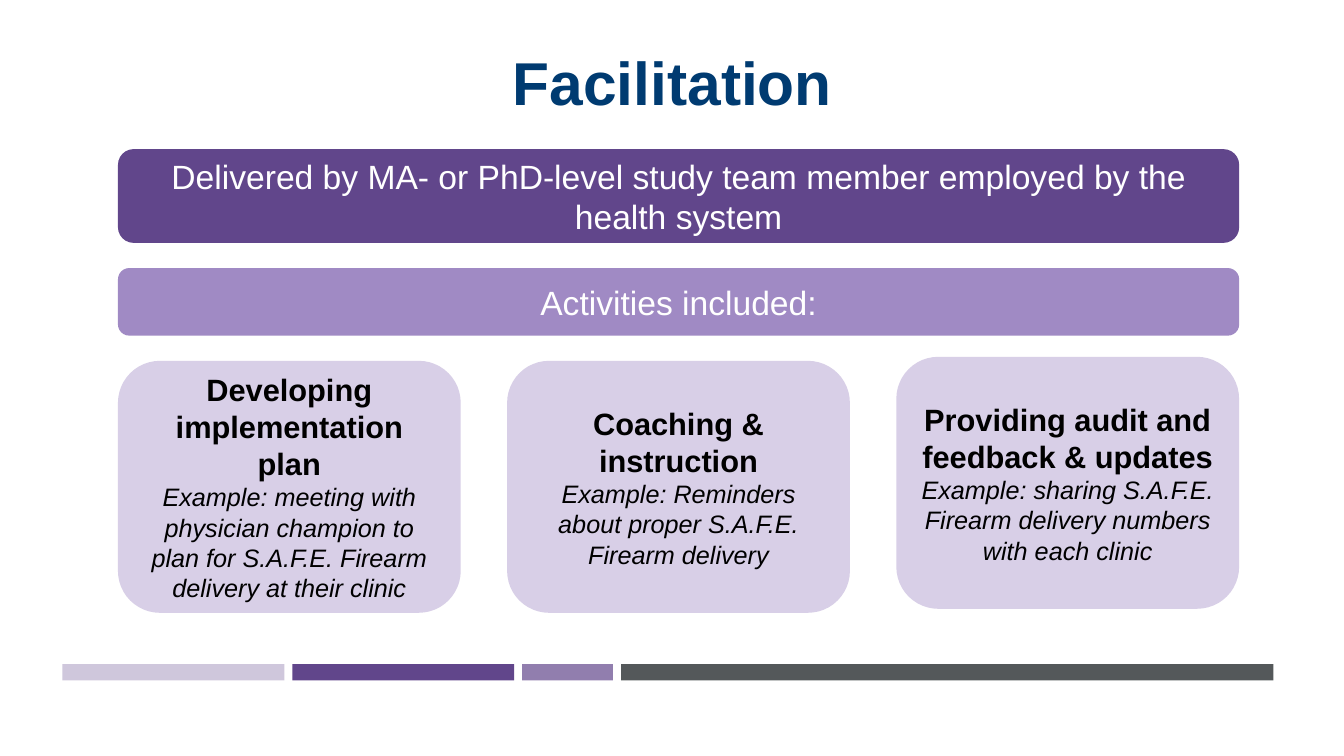
from pptx import Presentation
from pptx.dml.color import RGBColor as Rgb
from pptx.enum.shapes import MSO_SHAPE as Kind
from pptx.enum.text import MSO_ANCHOR as Anchor, PP_ALIGN as Align
from pptx.util import Inches, Pt

HUE = {
    "navy": "003B71", "white": "FFFFFF", "black": "000000", "slate": "54585A",
    "plum": "61468B", "mauve": "917EAE", "mist": "CFC7DC",
    "lilac": "A08AC4", "pale": "D8CFE7",
}
COLS, ROWS = 13.33, 7.5
LEFT, WIDE = 1.17, 11.12
CARD, STEP = 3.4, 3.86
GAP = 0.08
CARDS = [
    ("Developing implementation plan",
     "Example: meeting with physician champion to plan for S.A.F.E. Firearm delivery at their clinic", 3.58),
    ("Coaching & instruction",
     "Example: Reminders about proper S.A.F.E. Firearm delivery", 3.58),
    ("Providing audit and feedback & updates",
     "Example: sharing S.A.F.E. Firearm delivery numbers with each clinic", 3.54),
]
STRIP = [("mist", 2.2), ("plum", 2.2), ("mauve", 0.9), ("slate", 6.47)]


def cell(*spans):
    """Turn columns and rows of a one-inch grid into lengths."""
    return [Inches(span) for span in spans]


def write(frame, text, first=True, size=24, hue="white", bold=False, slant=False):
    """Add one centred paragraph to a text frame."""
    frame.word_wrap = True
    frame.vertical_anchor = Anchor.MIDDLE
    para = frame.paragraphs[0] if first else frame.add_paragraph()
    para.alignment = Align.CENTER
    run = para.add_run()
    run.text = text
    font = run.font
    font.name, font.size = "Arial", Pt(size)
    font.bold, font.italic = bold, slant
    font.color.rgb = Rgb.from_string(HUE[hue])


def block(slide, kind, hue, *spans):
    """Draw a flat filled shape and return its text frame."""
    shape = slide.shapes.add_shape(kind, *cell(*spans))
    shape.shadow.inherit = False
    shape.fill.solid()
    shape.fill.fore_color.rgb = Rgb.from_string(HUE[hue])
    shape.line.fill.background()
    return shape.text_frame


def title(slide, text):
    """Place the slide heading."""
    box = slide.shapes.add_textbox(*cell(0.92, 0.4, 11.5, 0.82))
    write(box.text_frame, text, size=43.2, hue="navy", bold=True)


def band(slide, text, hue, top, high):
    """Draw a full-width rounded band."""
    write(block(slide, Kind.ROUNDED_RECTANGLE, hue, LEFT, top, WIDE, high), text)


def card(slide, col, head, note, top):
    """Draw an activity card in the given column."""
    left = LEFT + col * STEP
    frame = block(slide, Kind.ROUNDED_RECTANGLE, "pale", left, top, CARD, 2.5)
    write(frame, head, size=22, hue="black", bold=True)
    write(frame, note, first=False, size=18, hue="black", slant=True)


def strip(slide):
    """Draw the row of coloured bars at the foot."""
    left = 0.62
    for hue, wide in STRIP:
        block(slide, Kind.RECTANGLE, hue, left, 6.59, wide, 0.16)
        left += wide + GAP


def main():
    """Build and save the slide."""
    deck = Presentation()
    deck.slide_width, deck.slide_height = cell(COLS, ROWS)
    slide = deck.slides.add_slide(deck.slide_layouts[6])
    title(slide, "Facilitation")
    strip(slide)
    band(slide, "Delivered by MA- or PhD-level study team member employed by the health system",
         "plum", 1.48, 0.93)
    band(slide, "Activities included:", "lilac", 2.66, 0.67)
    for col, parts in enumerate(CARDS):
        card(slide, col, *parts)
    deck.save("out.pptx")


if __name__ == "__main__":
    main()
